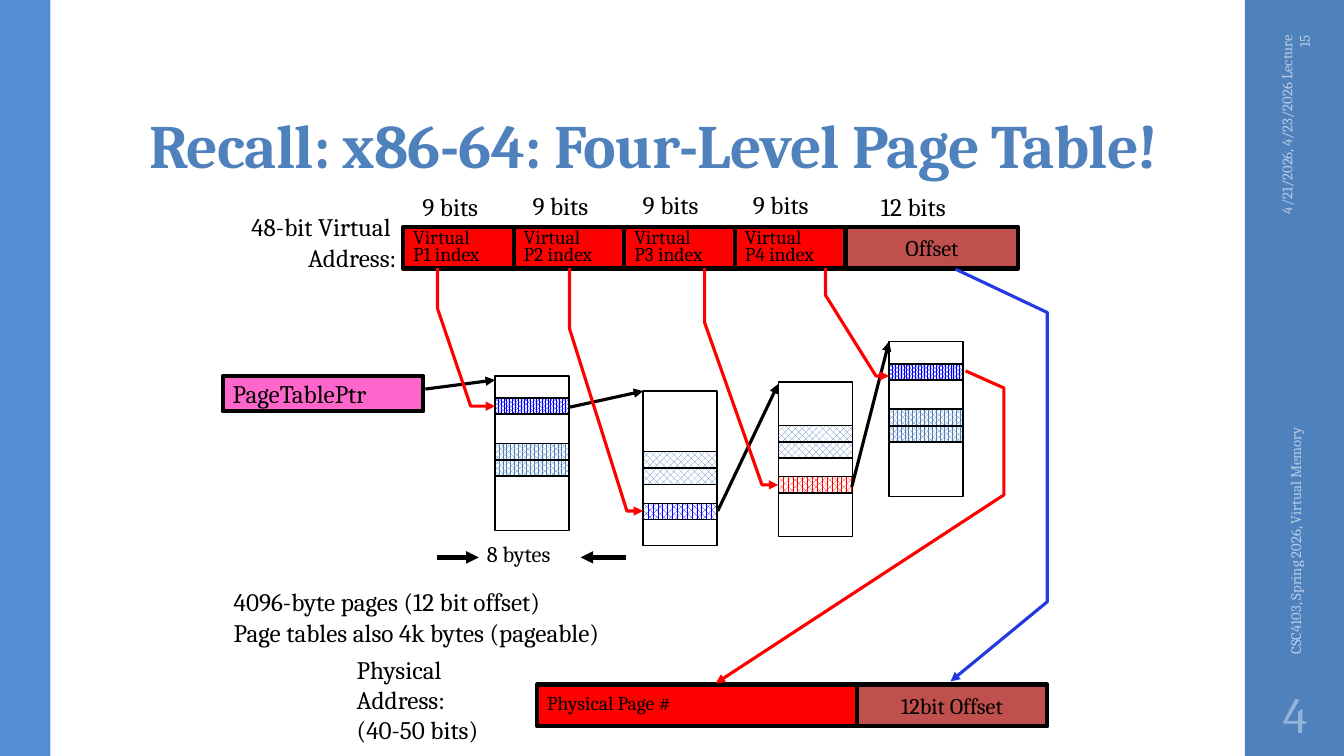
from lxml.etree import SubElement
from pptx import Presentation
from pptx.dml.color import RGBColor
from pptx.enum.dml import MSO_PATTERN
from pptx.enum.shapes import MSO_CONNECTOR, MSO_SHAPE
from pptx.enum.text import MSO_ANCHOR, MSO_AUTO_SIZE, PP_ALIGN
from pptx.oxml.ns import qn
from pptx.util import Inches, Pt

CELL = Inches(0.1)
COLUMNS, ROWS = 133.33, 75
FONT = "Cambria"
COLOURS = {
    "black": "000000", "white": "FFFFFF", "red": "FF0000", "blue": "0000FF",
    "route blue": "233AE1", "accent": "4F81BD", "left bar": "558ED5",
    "brick": "C0504D", "pink": "FF66CC", "footer": "B9CDE5", "number": "95B3D7",
}
DENSE = (MSO_PATTERN.PERCENT_80, "blue")
MEDIUM = (MSO_PATTERN.PERCENT_75, "accent")
LIGHT = (MSO_PATTERN.PERCENT_50, "accent")
NEXT_BLUE = (MSO_PATTERN.PERCENT_70, "blue")
NEXT_RED = (MSO_PATTERN.PERCENT_70, "red")
BOX_MARGINS = (1, 0.5)
LABEL_MARGINS = (0.7, 0.3)


def colour(name):
    return RGBColor.from_string(COLOURS[name])


def on_grid(*cells):
    return [round(cell * CELL) for cell in cells]


def write(shape, text, size, ink="black", align=PP_ALIGN.LEFT, spacing=1.0,
          anchor=MSO_ANCHOR.TOP, margins=BOX_MARGINS, wrap=False, bold=False):
    frame = shape.text_frame
    frame.text = text
    frame.word_wrap = wrap
    frame.vertical_anchor = anchor
    frame.margin_left, frame.margin_top = on_grid(*margins)
    frame.margin_right, frame.margin_bottom = on_grid(*margins)
    for paragraph in frame.paragraphs:
        paragraph.alignment = align
        paragraph.line_spacing = spacing
        for run in paragraph.runs:
            run.font.name = FONT
            run.font.size = Pt(size)
            run.font.bold = bold
            run.font.color.rgb = colour(ink)


def add_label(shapes, box, text, size, grow=True, rotation=0, **style):
    label = shapes.add_textbox(*on_grid(*box))
    label.rotation = rotation
    write(label, text, size, **style)
    if grow:
        label.text_frame.auto_size = MSO_AUTO_SIZE.SHAPE_TO_FIT_TEXT


def add_box(shapes, box, fill=None, pattern=None, width=0):
    shape = shapes.add_shape(MSO_SHAPE.RECTANGLE, *on_grid(*box))
    shape.shadow.inherit = False
    if pattern:
        shape.fill.patterned()
        shape.fill.pattern = pattern
        shape.fill.fore_color.rgb = colour(fill)
        shape.fill.back_color.rgb = colour("white")
    elif fill:
        shape.fill.solid()
        shape.fill.fore_color.rgb = colour(fill)
    else:
        shape.fill.background()
    if width:
        shape.line.color.rgb = colour("black")
        shape.line.width = Pt(width)
    else:
        shape.line.fill.background()
    return shape


def add_field(shapes, box, fill, text, size, **style):
    field = add_box(shapes, box, fill, width=3)
    write(field, text, size, anchor=MSO_ANCHOR.MIDDLE, **style)


def add_page_table(shapes, left, top, entries):
    table = shapes.add_group_shape().shapes
    add_box(table, (left, top, 7.35, 15.35), width=1)
    for offset, (pattern, fill) in entries:
        add_box(table, (left, top + offset, 7.35, 1.6), fill, pattern, width=1)


def finish_arrow(shape, ink, width):
    shape.line.color.rgb = colour(ink)
    shape.line.width = Pt(width)
    SubElement(shape.line._get_or_add_ln(), qn("a:tailEnd"), type="triangle")


def add_arrow(shapes, ends, width=2.25):
    arrow = shapes.add_connector(MSO_CONNECTOR.STRAIGHT, *on_grid(*ends))
    finish_arrow(arrow, "black", width)
    SubElement(arrow._element.spPr, qn("a:effectLst"))


def add_route(shapes, points, ink="red"):
    start, *corners = [on_grid(*point) for point in points]
    builder = shapes.build_freeform(*start)
    builder.add_line_segments(corners, close=False)
    route = builder.convert_to_shape()
    route.shadow.inherit = False
    route.fill.background()
    finish_arrow(route, ink, 2.25)


def add_title(slide):
    title = slide.shapes.title
    title.left, title.top, title.width, title.height = on_grid(13.8, 3.2, 106, 15.3)
    write(title, "Recall: x86-64: Four-Level Page Table!", 44, "accent", spacing=0.9,
          anchor=MSO_ANCHOR.BOTTOM, wrap=True, bold=True)
    title.text_frame.margin_top = round(0.3 * CELL)
    title.text_frame.paragraphs[0].runs[0].font._element.set("spc", "-50")


def add_frame(shapes):
    add_box(shapes, (123.5, 0, COLUMNS - 123.5, ROWS), "accent")
    add_box(shapes, (0, 0, 5, ROWS), "left bar")
    footer = {"ink": "footer", "rotation": 270, "grow": False,
              "anchor": MSO_ANCHOR.MIDDLE, "wrap": True}
    add_label(shapes, (118.1, 10.9, 20.8, 4), "4/21/2026, 4/23/2026 Lecture 15",
              10.5, align=PP_ALIGN.RIGHT, **footer)
    add_label(shapes, (108.9, 44.3, 39.2, 4), "CSC4103, Spring 2026, Virtual Memory",
              10.5, **footer)
    add_label(shapes, (123.5, 67.5, 10, 6.5), "4", 36, grow=False, ink="number",
              align=PP_ALIGN.CENTER, anchor=MSO_ANCHOR.MIDDLE,
              margins=(0.5, 0.5), wrap=True)


def add_addresses(shapes):
    label = {"spacing": 0.9, "margins": LABEL_MARGINS}
    for level, top in enumerate((19, 18.9, 18.8, 18.8)):
        add_label(shapes, (41.2 + 10.93 * level, top, 7.9, 3.3), "9 bits", 18, **label)
        add_field(shapes, (40 + 10.97 * level, 22.5, 10.97, 4.15), "red",
                  f"Virtual\nP{level + 1} index", 14, spacing=0.75)
    add_label(shapes, (86.7, 19, 9.3, 3.3), "12 bits", 18, **label)
    add_field(shapes, (83.9, 22.5, 17.1, 4.15), "brick", "Offset", 16,
              align=PP_ALIGN.CENTER)
    add_label(shapes, (21.7, 20.5, 18.6, 7), "48-bit Virtual \nAddress:", 18,
              align=PP_ALIGN.RIGHT, wrap=True)
    add_label(shapes, (34.4, 64.4, 15.2, 10.1), "Physical\nAddress:\n(40-50 bits)", 18)
    add_field(shapes, (85, 67.9, 18.9, 4.15), "brick", "12bit Offset", 16,
              align=PP_ALIGN.CENTER)
    add_field(shapes, (53.3, 67.9, 31.7, 4.15), "red", "Physical Page #", 14,
              spacing=0.75)
    add_field(shapes, (22.1, 37.3, 19.9, 3.5), "pink", "PageTablePtr", 18)
    add_label(shapes, (47.6, 53.6, 8.8, 3), "8 bytes", 16, **label)
    add_label(shapes, (22.2, 57.7, 43.9, 7.1),
              "4096-byte pages (12 bit offset)\vPage tables also 4k bytes (pageable)", 18)


def add_walk(shapes):
    outer_entries = [(2.2, DENSE), (6.7, MEDIUM), (8.35, MEDIUM)]
    add_page_table(shapes, 49.1, 37.3, outer_entries)
    add_page_table(shapes, 63.8, 38.8, [(6, LIGHT), (7.65, LIGHT), (11.15, NEXT_BLUE)])
    add_page_table(shapes, 77.2, 37.9, [(4.3, LIGHT), (5.95, LIGHT), (9.4, NEXT_RED)])
    add_page_table(shapes, 88.2, 33.9, outer_entries)
    for ends in ((43.4, 55.3, 47.5, 55.3), (62.1, 55.3, 57.6, 55.3)):
        add_arrow(shapes, ends, width=3)
    for ends in ((42.2, 38.6, 49.1, 37.7), (56.5, 40.4, 63.8, 38.8),
                 (71.2, 50.7, 77.2, 38.1), (84.5, 48.3, 88.2, 33.9)):
        add_arrow(shapes, ends)
    for start, bend, elbow, end, entry in (
            (43.4, 30.6, 46.7, 49.1, 40.3), (56.5, 32.6, 62.2, 63.8, 50.7),
            (69.9, 32, 75.6, 77.2, 48.1), (81.9, 29.3, 86.9, 88.2, 37.3)):
        add_route(shapes, [(start, 26.6), (start, bend), (elbow, entry), (end, entry)])
    add_route(shapes, [(94.8, 26.7), (103.9, 31), (103.9, 59.7), (94.3, 67.6)],
              "route blue")
    add_route(shapes, [(95.8, 36.8), (99.6, 38.5), (99.6, 49.1), (71, 67.8)])


def main():
    presentation = Presentation()
    presentation.slide_width, presentation.slide_height = on_grid(COLUMNS, ROWS)
    slide = presentation.slides.add_slide(presentation.slide_layouts[5])
    add_title(slide)
    add_frame(slide.shapes)
    add_addresses(slide.shapes)
    add_walk(slide.shapes)
    presentation.save("out.pptx")


if __name__ == "__main__":
    main()
